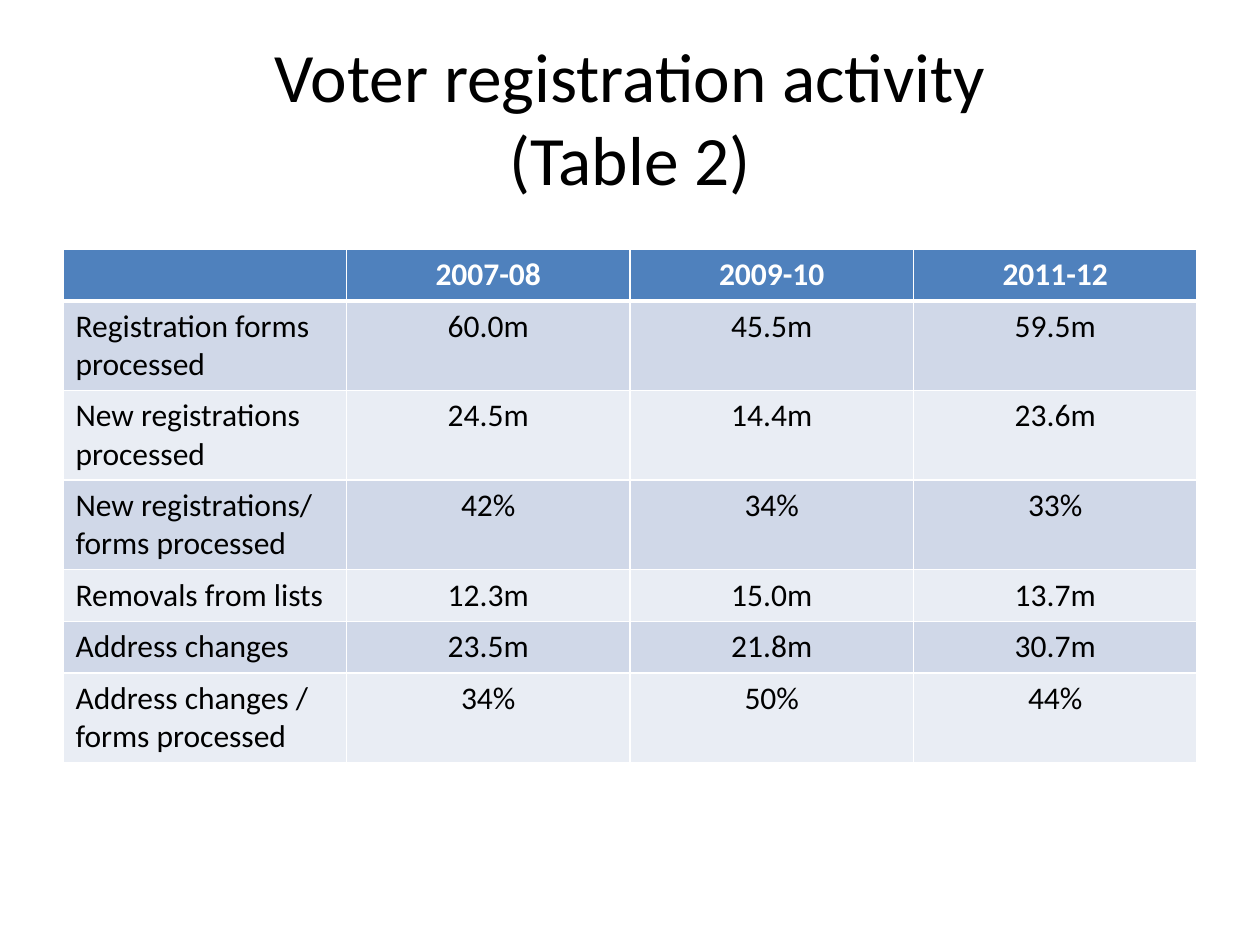
from dataclasses import dataclass

from lxml.etree import SubElement
from pptx import Presentation
from pptx.dml.color import RGBColor as RGB
from pptx.enum.text import MSO_ANCHOR as Anchor, MSO_AUTO_SIZE as Fit, PP_ALIGN as Align
from pptx.oxml.ns import qn
from pptx.util import Inches, Pt


@dataclass(frozen=True)
class Theme:
    font: str = "Calibri"
    title: float = 39.6
    body: float = 18
    ink: str = "000000"
    white: str = "FFFFFF"
    head: str = "4F81BD"
    bands: tuple[str, str] = ("D0D8E8", "E9EDF4")
    thin: float = 1
    thick: float = 3


@dataclass(frozen=True)
class Row:
    label: str
    values: tuple[str, str, str]


THEME = Theme()
ROWS = (
    Row("", ("2007-08", "2009-10", "2011-12")),
    Row("Registration forms processed", ("60.0m", "45.5m", "59.5m")),
    Row("New registrations processed", ("24.5m", "14.4m", "23.6m")),
    Row("New registrations/ forms processed", ("42%", "34%", "33%")),
    Row("Removals from lists", ("12.3m", "15.0m", "13.7m")),
    Row("Address changes", ("23.5m", "21.8m", "30.7m")),
    Row("Address changes / forms processed", ("34%", "50%", "44%")),
)


def style(para, size: float, color: str, bold: bool, align) -> None:
    para.alignment = align
    font = para.font
    font.name, font.size, font.bold = THEME.font, Pt(size), bold
    font.color.rgb = RGB.from_string(color)


def edge(cell, side: str, width: float) -> None:
    """Draw one white border; call before the cell gets its fill."""
    line = SubElement(cell._tc.get_or_add_tcPr(), qn(f"a:ln{side}"), w=str(Pt(width)))
    fill = SubElement(line, qn("a:solidFill"))
    SubElement(fill, qn("a:srgbClr"), val=THEME.white)


def draw_cell(cell, text: str, row: int, col: int) -> None:
    head = row == 0
    heavy = {0: "B", 1: "T"}.get(row)
    for side in "LRTB":
        edge(cell, side, THEME.thick if side == heavy else THEME.thin)
    cell.fill.solid()
    color = THEME.head if head else THEME.bands[(row - 1) % 2]
    cell.fill.fore_color.rgb = RGB.from_string(color)
    cell.text = text
    style(cell.text_frame.paragraphs[0], THEME.body,
          THEME.white if head else THEME.ink, head,
          Align.CENTER if col else Align.LEFT)


def draw_table(slide, rows: tuple[Row, ...]) -> None:
    cols = 1 + len(rows[0].values)
    high = Inches(0.41)
    table = slide.shapes.add_table(len(rows), cols, Inches(0.5), Inches(1.98),
                                   Inches(9), high * len(rows)).table
    for i, row in enumerate(rows):
        table.rows[i].height = high
        for j, text in enumerate((row.label, *row.values)):
            draw_cell(table.cell(i, j), text, i, j)


def draw_title(slide, text: str) -> None:
    title = slide.shapes.title
    title.left, title.top = Inches(0.5), Inches(0.3)
    title.width, title.height = Inches(9), Inches(1.25)
    frame = title.text_frame
    frame.auto_size, frame.vertical_anchor = Fit.NONE, Anchor.MIDDLE
    para = frame.paragraphs[0]
    para.text = text
    style(para, THEME.title, THEME.ink, False, Align.CENTER)


def main() -> None:
    deck = Presentation()
    deck.slide_width, deck.slide_height = Inches(10), Inches(7.5)
    slide = deck.slides.add_slide(deck.slide_layouts[5])
    draw_title(slide, "Voter registration activity\v(Table 2)")
    draw_table(slide, ROWS)
    deck.save("out.pptx")


if __name__ == "__main__":
    main()
